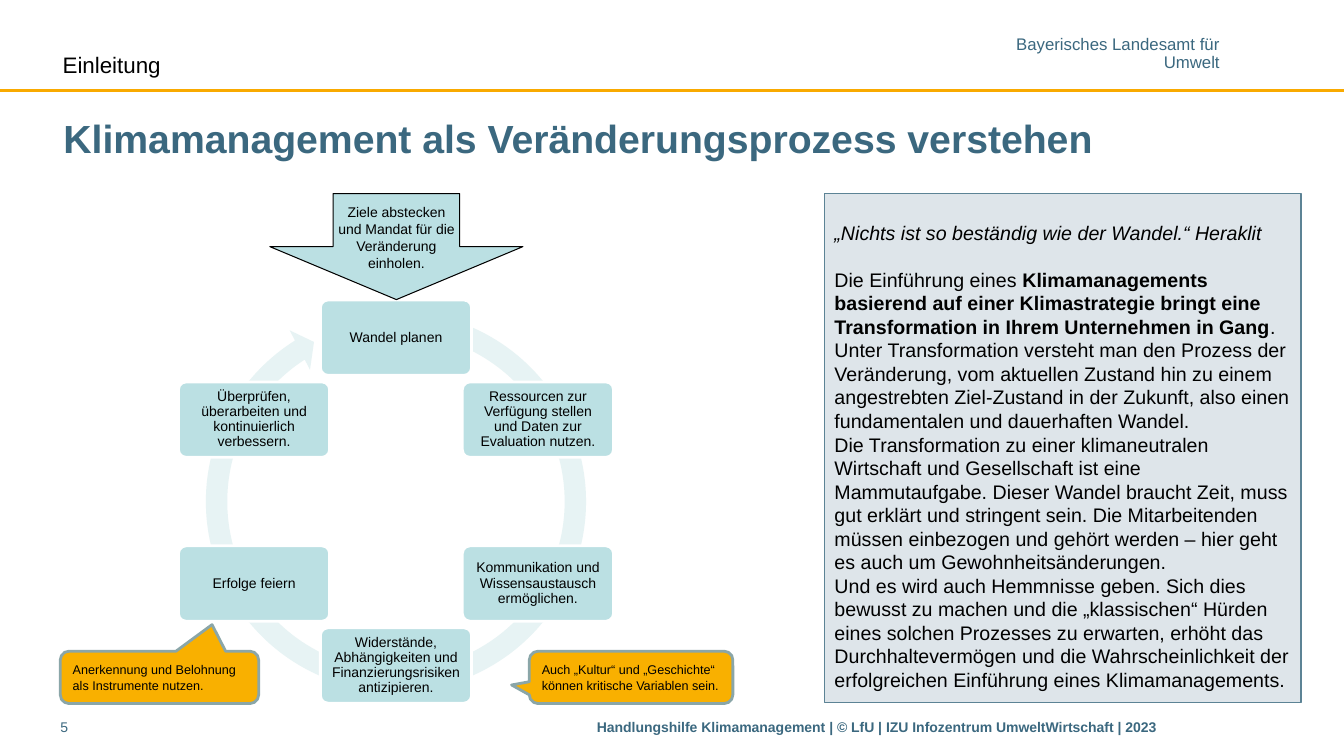
import math

from lxml import etree
from pptx import Presentation
from pptx import util as u
from pptx.dml.color import RGBColor
from pptx.enum import shapes, text
from pptx.oxml.ns import qn

SLATE, GOLD, TEAL, BLACK = "3B687F", "F9B000", "BBE0E3", "000000"
LEFT, CENTER, RIGHT = text.PP_ALIGN.LEFT, text.PP_ALIGN.CENTER, text.PP_ALIGN.RIGHT
TOP, MIDDLE = text.MSO_ANCHOR.TOP, text.MSO_ANCHOR.MIDDLE
KIND = shapes.MSO_SHAPE
PADDING = (0.25, 0.13, 0.25, 0.13)
FLAT = (0, 0.13, 0, 0.13)

STEPS = [
    "Wandel planen",
    "Ressourcen zur Verfügung stellen und Daten zur Evaluation nutzen.",
    "Kommunikation und Wissensaustausch ermöglichen.",
    "Widerstände, Abhängigkeiten und Finanzierungsrisiken antizipieren.",
    "Erfolge feiern",
    "Überprüfen, überarbeiten und kontinuierlich verbessern.",
]
QUOTE = "„Nichts ist so beständig wie der Wandel.“ Heraklit"
PANEL = [
    [(QUOTE, {"italic": True})],
    [
        ("Die Einführung eines ", {}),
        ("Klimamanagements basierend auf einer Klimastrategie bringt eine "
         "Transformation in Ihrem Unternehmen in Gang", {"bold": True}),
        (".", {}),
    ],
    "Unter Transformation versteht man den Prozess der Veränderung, vom aktuellen "
    "Zustand hin zu einem angestrebten Ziel-Zustand in der Zukunft, also einen "
    "fundamentalen und dauerhaften Wandel.",
    "Die Transformation zu einer klimaneutralen Wirtschaft und Gesellschaft ist eine "
    "Mammutaufgabe. Dieser Wandel braucht Zeit, muss gut erklärt und stringent sein. "
    "Die Mitarbeitenden müssen einbezogen und gehört werden – hier geht es auch um "
    "Gewohnheitsänderungen.",
    "Und es wird auch Hemmnisse geben. Sich dies bewusst zu machen und die "
    "„klassischen“ Hürden eines solchen Prozesses zu erwarten, erhöht das "
    "Durchhaltevermögen und die Wahrscheinlichkeit der erfolgreichen Einführung "
    "eines Klimamanagements.",
]


def color(value):
    return RGBColor.from_string(value)


def apply(target, values):
    for name, value in values.items():
        setattr(target, name, value)


def write(shape, paragraphs, size, ink=BLACK, bold=False, align=LEFT, anchor=TOP,
          padding=PADDING, spacing=None, wrap=True):
    frame = shape.text_frame
    left, top, right, bottom = (u.Cm(side) for side in padding)
    apply(frame, {"word_wrap": wrap, "vertical_anchor": anchor, "margin_left": left,
                  "margin_top": top, "margin_right": right, "margin_bottom": bottom})
    for index, content in enumerate(paragraphs):
        para = frame.add_paragraph() if index else frame.paragraphs[0]
        para.alignment = align
        if spacing:
            para.line_spacing = spacing
        for words, style in [(content, {})] if isinstance(content, str) else content:
            span = para.add_run()
            span.text = words
            apply(span.font, {"name": "Arial", "size": u.Pt(size), "bold": bold, **style})
            span.font.color.rgb = color(ink)
    return frame


def label(page, box, paragraphs, size, **style):
    field = page.shapes.add_textbox(*(u.Cm(length) for length in box))
    write(field, paragraphs, size, **style)


def block(page, kind, box, fill, line=None, width=1, adjustments=()):
    shape = page.shapes.add_shape(kind, *(u.Cm(length) for length in box))
    shape.shadow.inherit = False
    shape.fill.solid()
    shape.fill.fore_color.rgb = color(fill)
    if line:
        shape.line.color.rgb = color(line)
        shape.line.width = u.Pt(width)
    else:
        shape.line.fill.background()
    for index, value in enumerate(adjustments):
        shape.adjustments[index] = value
    return shape


def header(page, box):
    left, top, width, height = box
    bottom = top + height
    rule = page.shapes.add_connector(
        shapes.MSO_CONNECTOR.STRAIGHT,
        *(u.Cm(length) for length in (left, bottom, left + width, bottom)))
    rule.line.color.rgb = color("F9AA00")
    rule.line.width = u.Pt(2)
    etree.SubElement(rule._element.spPr, qn("a:effectLst"))
    label(page, (left + 25.58, top + 0.94, 5.16, 0.86),
          ["Bayerisches Landesamt für", "Umwelt"], 12, ink=SLATE, align=RIGHT,
          padding=(0, 0, 0, 0), spacing=0.85, wrap=False)
    label(page, (left + 1.33, top + 1.17, 4.24, 0.94), ["Einleitung"], 16)


def title(page, box):
    label(page, box, ["Klimamanagement als Veränderungsprozess verstehen"], 28,
          ink=SLATE, bold=True, anchor=MIDDLE, padding=FLAT)


def cycle(page, box):
    left, top, side, _ = box
    block(page, KIND.CIRCULAR_ARROW, box, "E7F3F4",
          adjustments=(0.053, 3.126, 142.565, 171.104, 0.055))
    radius, width, height = 4.13, 3.81, 1.9
    for index, step in enumerate(STEPS):
        angle = 2 * math.pi * index / len(STEPS)
        x = left + side / 2 + radius * math.sin(angle)
        y = top + side / 2 - radius * math.cos(angle)
        node = block(page, KIND.ROUNDED_RECTANGLE,
                     (x - width / 2, y - height / 2, width, height),
                     TEAL, "FFFFFF", 2, (0.1,))
        write(node, [step], 10, align=CENTER, anchor=MIDDLE,
              padding=(0.2, 0.2, 0.2, 0.2), spacing=0.9)


def goal_arrow(page, box):
    arrow = block(page, KIND.DOWN_ARROW, box, TEAL, BLACK, 0.75)
    write(arrow, ["Ziele abstecken und Mandat für die Veränderung einholen."], 10,
          align=CENTER, padding=(0.13, 0.25, 0.13, 0))


def callout(page, box, words, pointer):
    bubble = block(page, KIND.ROUNDED_RECTANGULAR_CALLOUT, box, GOLD, "8AA6A8", 2,
                   (*pointer, 0.167))
    write(bubble, [words], 9, anchor=MIDDLE)


def panel(page, box):
    area = block(page, KIND.RECTANGLE, box, "DEE5EA", "5C8395")
    frame = write(area, PANEL, 14, padding=(0.25, 0.68, 0.25, 0.13))
    frame.paragraphs[0].space_after = u.Pt(16.8)


def footer(page, box):
    left, top, width, height = box
    label(page, (left + 13.52, top, width - 13.52, height),
          ["Handlungshilfe Klimamanagement | © LfU | IZU Infozentrum UmweltWirtschaft | 2023"],
          10, ink=SLATE, bold=True, padding=FLAT)
    label(page, (left, top, 1.78, height), ["5"], 10, ink=SLATE, padding=FLAT)


def main():
    deck = Presentation()
    apply(deck, {"slide_width": u.Cm(33.87), "slide_height": u.Cm(19.05)})
    page = deck.slides.add_slide(deck.slide_layouts[6])
    header(page, (0, 0, 33.87, 2.29))
    footer(page, (1.52, 17.98, 31.27, 0.79))
    cycle(page, (4.9, 7.56, 10.16, 10.16))
    goal_arrow(page, (6.8, 4.88, 6.38, 2.67))
    callout(page, (13.34, 16.41, 5.13, 1.32),
            "Auch „Kultur“ und „Geschichte“ können kritische Variablen sein.",
            (-0.587, 0.145))
    callout(page, (1.52, 16.41, 5, 1.32),
            "Anerkennung und Belohnung als Instrumente nutzen.", (0.265, -1.007))
    title(page, (1.6, 2.77, 31.27, 1.4))
    panel(page, (20.78, 4.88, 12.01, 12.83))
    deck.save("out.pptx")


if __name__ == "__main__":
    main()
